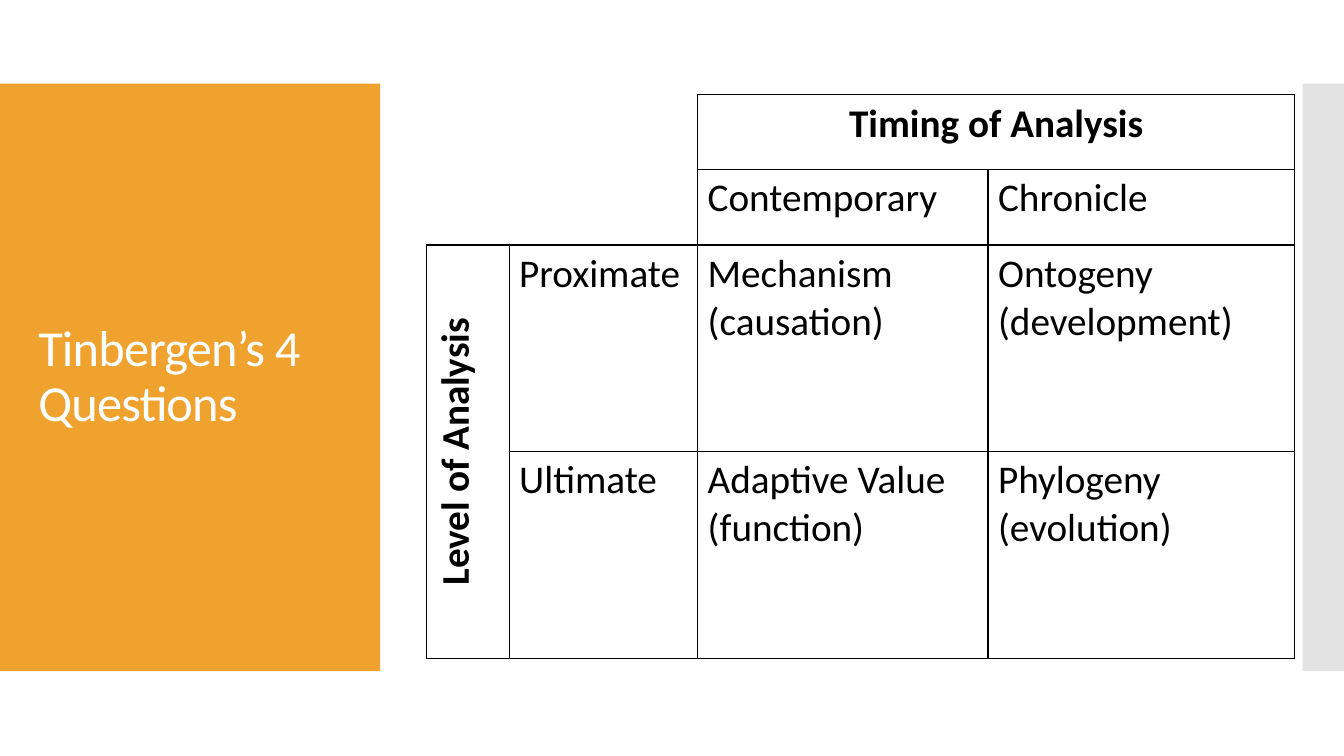
from dataclasses import dataclass

from lxml.etree import SubElement
from pptx import Presentation
from pptx.dml.color import RGBColor
from pptx.enum.shapes import MSO_SHAPE as Preset
from pptx.enum.text import MSO_ANCHOR as Anchor, MSO_AUTO_SIZE as AutoSize, PP_ALIGN as Align
from pptx.oxml.ns import qn
from pptx.util import Emu, Pt

EMU_PER_PX = 9144
FONT = "Calibri"
WHITE, BLACK = "FFFFFF", "000000"
COLUMN_WIDTHS = (82, 187, 288, 304)
ROW_HEIGHTS = (74, 75, 205, 205)


@dataclass(frozen=True)
class Panel:
    left: int
    width: int
    color: str
    opacity: int = 100


@dataclass(frozen=True)
class Entry:
    row: int
    column: int
    text: str
    heading: bool = False
    row_span: int = 1
    column_span: int = 1
    vertical: bool = False


PANELS = (Panel(0, 377, "F0A22E"), Panel(1292, 41, "C8C8C8", 50))

ENTRIES = (
    Entry(0, 2, "Timing of Analysis", heading=True, column_span=2),
    Entry(1, 2, "Contemporary"),
    Entry(1, 3, "Chronicle"),
    Entry(2, 0, "Level of Analysis", heading=True, row_span=2, vertical=True),
    Entry(2, 1, "Proximate"),
    Entry(2, 2, "Mechanism\n(causation)"),
    Entry(2, 3, "Ontogeny (development)"),
    Entry(3, 1, "Ultimate"),
    Entry(3, 2, "Adaptive Value\n(function)"),
    Entry(3, 3, "Phylogeny\n(evolution)"),
)


def px(value: int) -> Emu:
    return Emu(value * EMU_PER_PX)


def rgb(color: str) -> RGBColor:
    return RGBColor.from_string(color)


def format_text(text_frame, size: int, color: str, bold: bool, align: Align) -> None:
    for paragraph in text_frame.paragraphs:
        paragraph.alignment = align
        for run in paragraph.runs:
            run.font.name = FONT
            run.font.size = Pt(size)
            run.font.bold = bold
            run.font.color.rgb = rgb(color)


def add_panel(slide, panel: Panel) -> None:
    shape = slide.shapes.add_shape(
        Preset.RECTANGLE, px(panel.left), px(83), px(panel.width), px(583)
    )
    shape.shadow.inherit = False
    shape.line.fill.background()
    shape.fill.solid()
    shape.fill.fore_color.rgb = rgb(panel.color)
    if panel.opacity < 100:
        color = shape.element.spPr.find(f"{qn('a:solidFill')}/{qn('a:srgbClr')}")
        SubElement(color, qn("a:alpha"), val=str(panel.opacity * 1000))


def place_title(slide) -> None:
    title = slide.shapes.title
    slide.shapes.element.append(title.element)
    title.left, title.top, title.width, title.height = px(28), px(123), px(322), px(503)
    text_frame = title.text_frame
    text_frame.text = "Tinbergen’s 4 Questions"
    text_frame.word_wrap = True
    text_frame.auto_size = AutoSize.NONE
    text_frame.vertical_anchor = Anchor.MIDDLE
    format_text(text_frame, 36, WHITE, False, Align.LEFT)
    paragraph = text_frame.paragraphs[0]
    paragraph.line_spacing = 0.9
    paragraph.runs[0].font._element.set("spc", "-60")


def style_cell(cell, row: int, column: int) -> None:
    blank = row < 2 and column < 2
    edges = {
        "L": not blank,
        "R": not blank or column == 1,
        "T": not blank,
        "B": not blank or row == 1,
    }
    properties = cell._tc.get_or_add_tcPr()
    for side, visible in edges.items():
        border = SubElement(properties, qn(f"a:ln{side}"), w=str(Pt(1)))
        if visible:
            fill = SubElement(border, qn("a:solidFill"))
            SubElement(fill, qn("a:srgbClr"), val=BLACK)
        else:
            SubElement(border, qn("a:noFill"))
    cell.fill.solid()
    cell.fill.fore_color.rgb = rgb(WHITE)


def fill_entry(table, entry: Entry) -> None:
    cell = table.cell(entry.row, entry.column)
    if entry.row_span * entry.column_span > 1:
        cell.merge(
            table.cell(
                entry.row + entry.row_span - 1, entry.column + entry.column_span - 1
            )
        )
    if entry.vertical:
        cell._tc.get_or_add_tcPr().set("vert", "vert270")
    cell.text_frame.text = entry.text
    align = Align.CENTER if entry.heading else Align.LEFT
    format_text(cell.text_frame, 28, BLACK, entry.heading, align)


def add_question_table(slide) -> None:
    table = slide.shapes.add_table(
        len(ROW_HEIGHTS), len(COLUMN_WIDTHS),
        px(423), px(94), px(sum(COLUMN_WIDTHS)), px(sum(ROW_HEIGHTS)),
    ).table
    table.first_row = False
    table.horz_banding = False
    for column, width in zip(table.columns, COLUMN_WIDTHS):
        column.width = px(width)
    for row, height in zip(table.rows, ROW_HEIGHTS):
        row.height = px(height)
    for row_index in range(len(ROW_HEIGHTS)):
        for column_index in range(len(COLUMN_WIDTHS)):
            style_cell(table.cell(row_index, column_index), row_index, column_index)
    for entry in ENTRIES:
        fill_entry(table, entry)


def main() -> None:
    presentation = Presentation()
    presentation.slide_width, presentation.slide_height = px(1333), px(750)
    slide = presentation.slides.add_slide(presentation.slide_layouts[5])
    slide.background.fill.solid()
    slide.background.fill.fore_color.rgb = rgb(WHITE)
    for panel in PANELS:
        add_panel(slide, panel)
    place_title(slide)
    add_question_table(slide)
    presentation.save("out.pptx")


if __name__ == "__main__":
    main()
